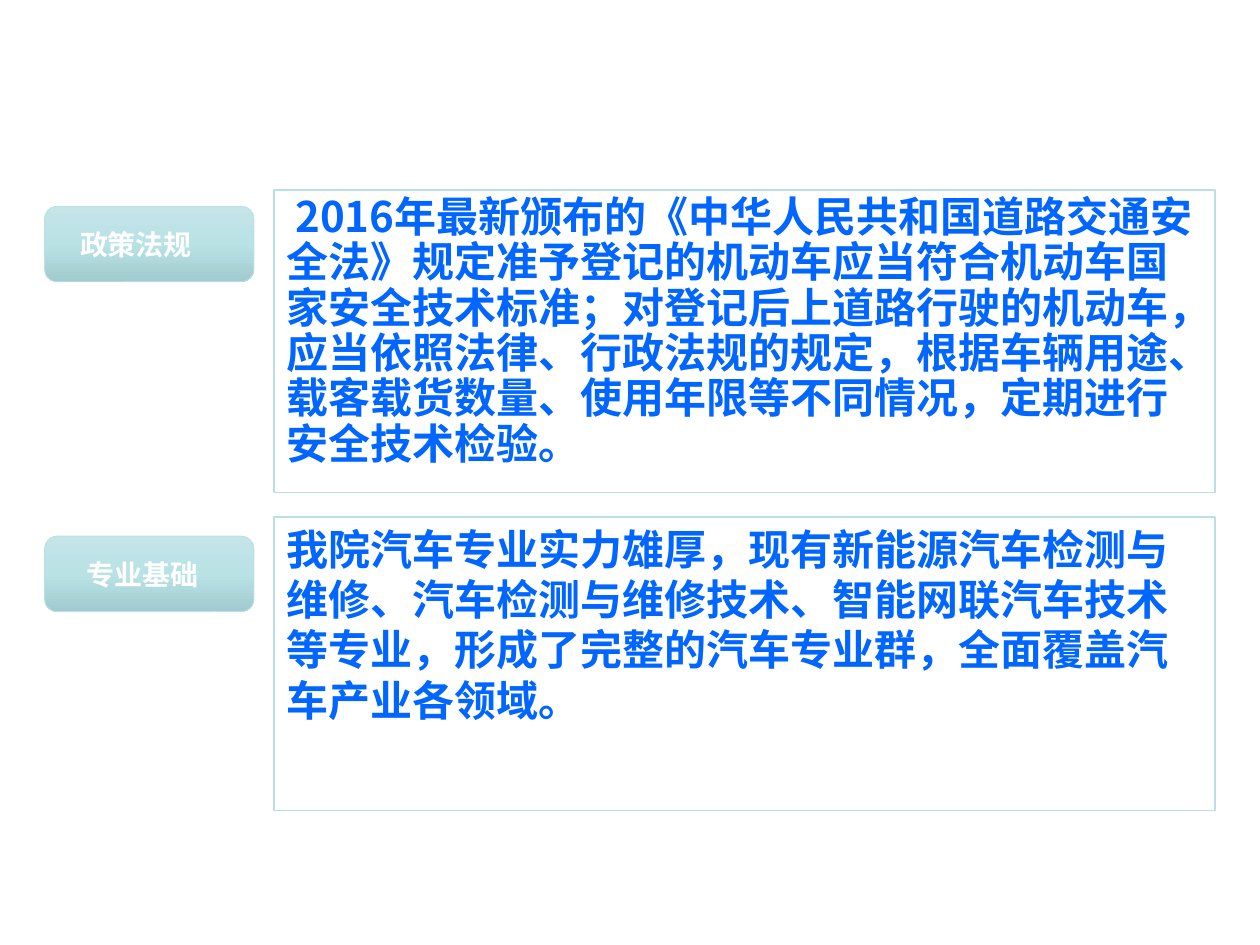
"""Build a slide that pairs two topic labels with framed explanations."""
from copy import deepcopy

from lxml.etree import SubElement
from pptx import Presentation
from pptx.dml.color import RGBColor
from pptx.enum.shapes import MSO_SHAPE
from pptx.enum.text import MSO_ANCHOR, MSO_AUTO_SIZE, PP_ALIGN
from pptx.oxml.ns import qn
from pptx.util import Cm, Pt

COLORS = {"panel": "FFFFFF", "border": "BBE0E3", "body": "0066FF", "label": "FFFFFF"}
LABEL_GRADIENT = [(0, "C5E5E8"), (0.5, "B9E2E5"), (1, "A1CBCE")]
CHINESE_FONT = "Noto Sans CJK SC"
POLICY = (
    "2016年最新颁布的《中华人民共和国道路交通安全法》规定准予登记的机动车应当符合机动车国家安全技术标准；"
    "对登记后上道路行驶的机动车，应当依照法律、行政法规的规定，根据车辆用途、载客载货数量、使用年限等不同情况，"
    "定期进行安全技术检验。"
)
FOUNDATION = (
    "我院汽车专业实力雄厚，现有新能源汽车检测与维修、汽车检测与维修技术、智能网联汽车技术等专业，"
    "形成了完整的汽车专业群，全面覆盖汽车产业各领域。"
)


def color(name):
    return RGBColor.from_string(COLORS[name])


def place(shape, left, top, width, height):
    shape.left, shape.top, shape.width, shape.height = map(Cm, (left, top, width, height))


def write(shape, text, size, font_name, color_name, indent=0.0, spacing=1.0):
    frame = shape.text_frame
    frame.word_wrap = True
    frame.auto_size = MSO_AUTO_SIZE.NONE
    frame.text = text
    paragraph = frame.paragraphs[0]
    paragraph.alignment = PP_ALIGN.LEFT
    paragraph.line_spacing = spacing
    paragraph.space_before = Pt(0)
    properties = paragraph._p.get_or_add_pPr()
    properties.set("marL", "0")
    properties.set("indent", str(Cm(indent)))
    SubElement(properties, qn("a:buNone"))
    font = paragraph.font
    font.size, font.bold, font.name = Pt(size), True, font_name
    font.color.rgb = color(color_name)
    SubElement(properties.find(qn("a:defRPr")), qn("a:ea"), typeface=CHINESE_FONT)


def format_panel(shape, top, height, text, indent=0.0, spacing=1.0):
    place(shape, 5.52, top, 18.98, height)
    shape.fill.solid()
    shape.fill.fore_color.rgb = color("panel")
    shape.line.color.rgb = color("border")
    shape.line.width = Pt(1)
    shape.text_frame.vertical_anchor = MSO_ANCHOR.TOP
    shape.text_frame.margin_right = Cm(0.2)
    write(shape, text, 24, CHINESE_FONT, "body", indent, spacing)


def add_label(slide, top, text, indent):
    shape = slide.shapes.add_shape(MSO_SHAPE.ROUNDED_RECTANGLE, 0, 0, 0, 0)
    place(shape, 0.9, top, 4.22, 1.52)
    shape.shadow.inherit = False
    shape.fill.gradient()
    shape.fill.gradient_angle = 270
    stops = shape._element.spPr.find(".//" + qn("a:gsLst"))
    stops.insert(1, deepcopy(stops[0]))
    for stop, (position, value) in zip(shape.fill.gradient_stops, LABEL_GRADIENT):
        stop.position = position
        stop.color.rgb = RGBColor.from_string(value)
    shape.line.color.rgb = color("border")
    shape.line.width = Pt(0.5)
    shape.text_frame.vertical_anchor = MSO_ANCHOR.MIDDLE
    write(shape, text, 16, "Arial", "label", indent)


def main():
    presentation = Presentation()
    presentation.slide_width, presentation.slide_height = Cm(25.4), Cm(19.05)
    slide = presentation.slides.add_slide(presentation.slide_layouts[1])
    title = slide.shapes.title
    title._element.getparent().remove(title._element)

    format_panel(slide.placeholders[1], 3.83, 6.1, POLICY, indent=0.18, spacing=0.9)
    add_label(slide, 4.16, "政策法规", 0.39)
    foundation = slide.shapes.add_shape(MSO_SHAPE.RECTANGLE, 0, 0, 0, 0)
    foundation.shadow.inherit = False
    format_panel(foundation, 10.42, 5.92, FOUNDATION)
    add_label(slide, 10.81, "专业基础", 0.52)

    presentation.save("out.pptx")


if __name__ == "__main__":
    main()
